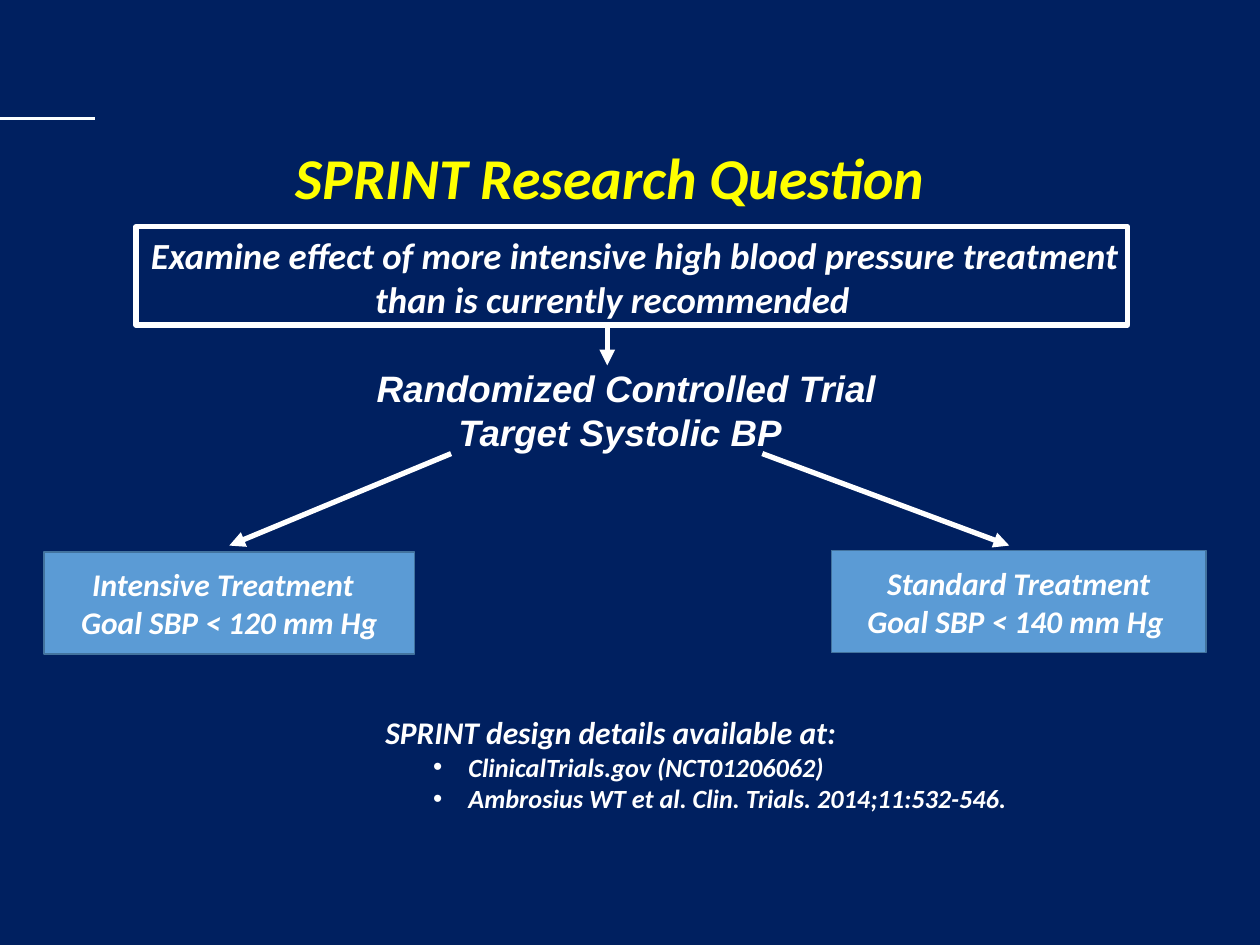
"""Build the SPRINT research question slide on a grid of 100 columns by 75 rows."""
from dataclasses import dataclass
from typing import NamedTuple

from lxml import etree
from pptx import Presentation
from pptx import util as u
from pptx.dml.color import RGBColor
from pptx.enum import shapes, text
from pptx.oxml import ns

CELL = 0.1


@dataclass(frozen=True)
class Theme:
    back: str = "002060"
    white: str = "FFFFFF"
    gold: str = "FFFF00"
    blue: str = "5B9BD5"
    edge: str = "43739E"
    rule: str = "FBFFFF"
    head: float = 33
    lead: float = 21
    body: float = 18
    note: float = 15
    bold: float = 3
    sans: str = "Calibri"
    alt: str = "Arial"


class Area(NamedTuple):
    col: float
    row: float
    cols: float
    rows: float


class Para(NamedTuple):
    words: str
    size: float
    left: float = 0
    right: float = 0
    mark: bool = False


class Block(NamedTuple):
    area: Area
    paras: list[Para]
    font: str
    tint: str
    anchor: text.MSO_ANCHOR = text.MSO_ANCHOR.TOP
    lead: float = 1.0


class Arm(NamedTuple):
    area: Area
    paras: list[Para]


class Link(NamedTuple):
    start: tuple[float, float]
    end: tuple[float, float]
    tint: str
    width: float
    arrow: bool = True


THEME = Theme()
TITLE = Block(Area(22.5, 8.9, 61.4, 10.9), [Para("SPRINT Research Question", THEME.head)],
              THEME.sans, THEME.gold, text.MSO_ANCHOR.MIDDLE, 0.9)
AIM = Block(Area(11, 18, 80.4, 8.1), [
    Para("Examine effect of more intensive high blood pressure treatment", THEME.lead),
    Para("than is currently recommended", THEME.lead, left=17.8),
], THEME.sans, THEME.white)
TRIAL = Block(Area(26.5, 28.5, 48.5, 8.1), [
    Para("Randomized Controlled Trial", THEME.lead, left=2.4),
    Para("Target Systolic BP", THEME.lead, left=8.9),
], THEME.alt, THEME.white)
NOTES = Block(Area(29.6, 56.1, 70.4, 9.1), [
    Para("SPRINT design details available at:", THEME.body),
    Para("ClinicalTrials.gov (NCT01206062)", THEME.note, left=6.6, mark=True),
    Para("Ambrosius WT et al. Clin. Trials. 2014;11:532-546.", THEME.note, left=6.6, mark=True),
], THEME.sans, THEME.white)
ARMS = [
    Arm(Area(3.5, 43.8, 29.4, 8.1), [
        Para("Intensive Treatment", THEME.body, right=1),
        Para("Goal SBP < 120 mm Hg", THEME.body),
    ]),
    Arm(Area(66, 43.7, 29.7, 8.1), [
        Para("Standard Treatment", THEME.body),
        Para("Goal SBP < 140 mm Hg", THEME.body, right=0.5),
    ]),
]
FRAME = Area(10.8, 18, 78.7, 7.8)
RULE = Link((0, 9.4), (7.5, 9.4), THEME.rule, 0, arrow=False)
FORKS = [
    Link((35.8, 36), (18.2, 43.3), THEME.white, THEME.bold),
    Link((60.5, 36), (80.1, 43.3), THEME.white, THEME.bold),
]
DROP = Link((48.2, 25.9), (48.2, 29), THEME.white, THEME.bold)


def span(cells: float) -> u.Emu:
    """Turn grid cells into a length."""
    return u.Inches(cells * CELL)


def apply(target, values: dict) -> None:
    """Set each named attribute on the target."""
    for name, value in values.items():
        setattr(target, name, value)


def paint(fill, tint: str) -> None:
    """Give a fill one solid colour."""
    fill.solid()
    fill.fore_color.rgb = RGBColor.from_string(tint)


def write(frame, paras: list[Para], font: str, tint: str, **look) -> None:
    """Fill a text frame with formatted paragraphs."""
    frame.word_wrap = True
    for i, item in enumerate(paras):
        para = frame.paragraphs[0] if i == 0 else frame.add_paragraph()
        apply(para, look)
        props = para._p.get_or_add_pPr()
        props.set("marL", str(span(item.left)))
        props.set("marR", str(span(item.right)))
        if item.mark:
            para.level = 1
            props.set("indent", str(span(-2.8)))
            etree.SubElement(props, ns.qn("a:buFont")).set("typeface", THEME.alt)
            etree.SubElement(props, ns.qn("a:buChar")).set("char", "•")
        run = para.add_run()
        run.text = item.words
        apply(run.font, {"name": font, "size": u.Pt(item.size), "bold": True, "italic": True})
        run.font.color.rgb = RGBColor.from_string(tint)


def add_text(slide, block: Block) -> None:
    """Place a block of plain text."""
    frame = slide.shapes.add_textbox(*map(span, block.area)).text_frame
    frame.vertical_anchor = block.anchor
    write(frame, block.paras, block.font, block.tint, line_spacing=block.lead)


def add_box(slide, area: Area, edge: str, width: float):
    """Place an outlined rectangle without a fill."""
    box = slide.shapes.add_shape(shapes.MSO_SHAPE.RECTANGLE, *map(span, area))
    box.shadow.inherit = False
    box.fill.background()
    paint(box.line.fill, edge)
    box.line.width = u.Pt(width)
    return box


def add_arm(slide, arm: Arm) -> None:
    """Place the filled box of one treatment arm."""
    box = add_box(slide, arm.area, THEME.edge, 1)
    paint(box.fill, THEME.blue)
    box.text_frame.vertical_anchor = text.MSO_ANCHOR.MIDDLE
    write(box.text_frame, arm.paras, THEME.sans, THEME.white, alignment=text.PP_ALIGN.CENTER)


def add_link(slide, link: Link) -> None:
    """Draw a straight line, with an arrowhead if asked."""
    line = slide.shapes.add_connector(
        shapes.MSO_CONNECTOR.STRAIGHT, *map(span, link.start + link.end))
    paint(line.line.fill, link.tint)
    line.line.width = u.Pt(link.width)
    if link.arrow:
        tail = etree.SubElement(line.line._get_or_add_ln(), ns.qn("a:tailEnd"))
        tail.set("type", "triangle")
    etree.SubElement(line._element.spPr, ns.qn("a:effectLst"))


def main() -> None:
    """Build and save the slide."""
    deck = Presentation()
    apply(deck, {"slide_width": span(100), "slide_height": span(75)})
    slide = deck.slides.add_slide(deck.slide_layouts[6])
    paint(slide.background.fill, THEME.back)
    add_link(slide, RULE)
    for block in (TITLE, AIM, TRIAL):
        add_text(slide, block)
    for arm in ARMS:
        add_arm(slide, arm)
    for fork in FORKS:
        add_link(slide, fork)
    add_text(slide, NOTES)
    add_link(slide, DROP)
    add_box(slide, FRAME, THEME.white, THEME.bold)
    deck.save("out.pptx")


if __name__ == "__main__":
    main()
